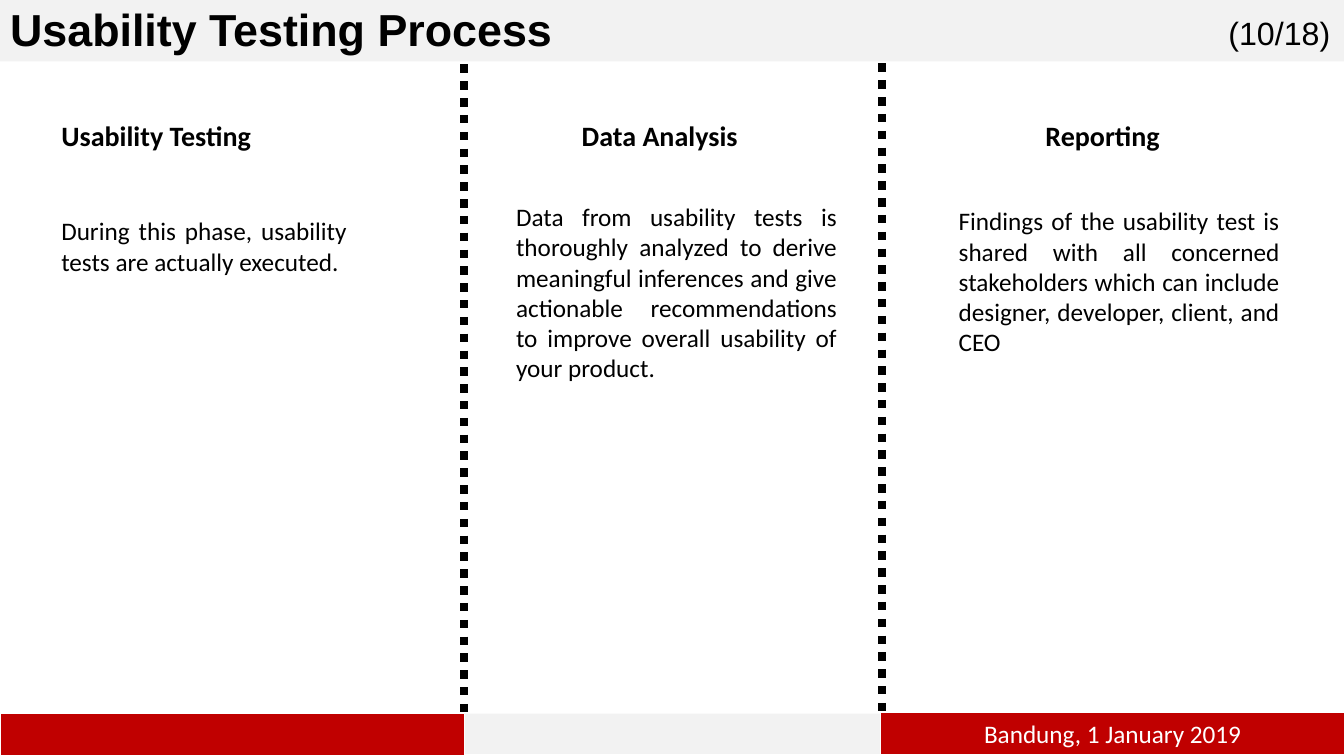
from dataclasses import dataclass

from lxml.etree import SubElement
from pptx import Presentation
from pptx.dml.color import RGBColor
from pptx.enum.dml import MSO_LINE_DASH_STYLE as Dash
from pptx.enum.shapes import MSO_CONNECTOR as Connector, MSO_SHAPE as Shape
from pptx.enum.text import MSO_ANCHOR as Anchor, MSO_AUTO_SIZE as AutoSize, PP_ALIGN as Align
from pptx.oxml.ns import qn
from pptx.util import Pt

PX = 9144  # EMU in one px, 100 px to the inch


@dataclass(frozen=True)
class Theme:
    ink: str = "000000"
    paper: str = "FFFFFF"
    band: str = "F2F2F2"
    accent: str = "C00000"
    display: str = "Arial"
    text: str = "Calibri"
    title_size: int = 32
    page_size: int = 23
    heading_size: int = 20
    body_size: int = 18
    divider_width: int = 6


def write(frame, text, *, size, color, font, bold=False, align=Align.LEFT,
          anchor=Anchor.TOP, wrap=True):
    frame.auto_size = AutoSize.NONE
    frame.word_wrap = wrap
    frame.vertical_anchor = anchor
    paragraph = frame.paragraphs[0]
    paragraph.alignment = align
    run = paragraph.add_run()
    run.text = text
    run.font.name = font
    run.font.size = Pt(size)
    run.font.bold = bold
    run.font.color.rgb = RGBColor.from_string(color)


def paint(shape, color):
    shape.fill.solid()
    shape.fill.fore_color.rgb = RGBColor.from_string(color)


class SlideBuilder:
    def __init__(self, slide, theme):
        self.slide, self.theme = slide, theme

    def title(self, text, box):
        title = self.slide.shapes.title
        title.left, title.top, title.width, title.height = (n * PX for n in box)
        paint(title, self.theme.band)
        write(title.text_frame, text, size=self.theme.title_size,
              color=self.theme.ink, font=self.theme.display, bold=True)

    def label(self, text, box, **style):
        label = self.slide.shapes.add_textbox(*(n * PX for n in box))
        style = {"color": self.theme.ink, "font": self.theme.text, **style}
        write(label.text_frame, text, **style)

    def divider(self, x, top, bottom):
        divider = self.slide.shapes.add_connector(
            Connector.STRAIGHT, x * PX, top * PX, x * PX, bottom * PX)
        divider.line.color.rgb = RGBColor.from_string(self.theme.ink)
        divider.line.width = Pt(self.theme.divider_width)
        divider.line.dash_style = Dash.ROUND_DOT
        SubElement(divider._element.spPr, qn("a:effectLst"))

    def bar(self, box, color, outline=None, text=None):
        bar = self.slide.shapes.add_shape(Shape.RECTANGLE, *(n * PX for n in box))
        bar.shadow.inherit = False
        paint(bar, color)
        if outline:
            bar.line.color.rgb = RGBColor.from_string(outline)
            bar.line.width = Pt(1)
        else:
            bar.line.fill.background()
        if text:
            write(bar.text_frame, text, size=self.theme.body_size,
                  color=self.theme.paper, font=self.theme.text,
                  align=Align.CENTER, anchor=Anchor.MIDDLE)


# Phase: heading, heading box, description, description box
PHASES = [
    ("Usability Testing", (51, 113, 338, 44),
     "During this phase, usability tests are actually executed.",
     (51, 209, 303, 71)),
    ("Data Analysis", (567, 113, 232, 44),
     "Data from usability tests is thoroughly analyzed to derive meaningful "
     "inferences and give actionable recommendations to improve overall "
     "usability of your product.",
     (502, 195, 338, 192)),
    ("Reporting", (1027, 113, 232, 44),
     "Findings of the usability test is shared with all concerned stakeholders "
     "which can include designer, developer, client, and CEO",
     (941, 199, 338, 162)),
]


def main():
    theme = Theme()
    deck = Presentation()
    deck.slide_width, deck.slide_height = 1333 * PX, 750 * PX
    title_only = deck.slide_layouts[5]
    builder = SlideBuilder(deck.slides.add_slide(title_only), theme)

    # Header
    builder.title("Usability Testing Process", (0, -3, 1333, 64))
    builder.label("(10/18)", (1208, 8, 122, 49), size=theme.page_size,
                  font=theme.display, align=Align.CENTER, wrap=False)

    # Phases
    for heading, heading_box, description, description_box in PHASES:
        builder.label(heading, heading_box, size=theme.heading_size, bold=True)
        builder.label(description, description_box, size=theme.body_size,
                      align=Align.JUSTIFY)

    # Column dividers
    builder.divider(460, 64, 710)
    builder.divider(875, 63, 709)

    # Footer
    builder.bar((0, 708, 461, 42), theme.accent, outline=theme.paper)
    builder.bar((873, 707, 461, 42), theme.accent, outline=theme.paper,
                text="Bandung, 1 January 2019")
    builder.bar((461, 708, 412, 40), theme.band)

    deck.save("out.pptx")


if __name__ == "__main__":
    main()
